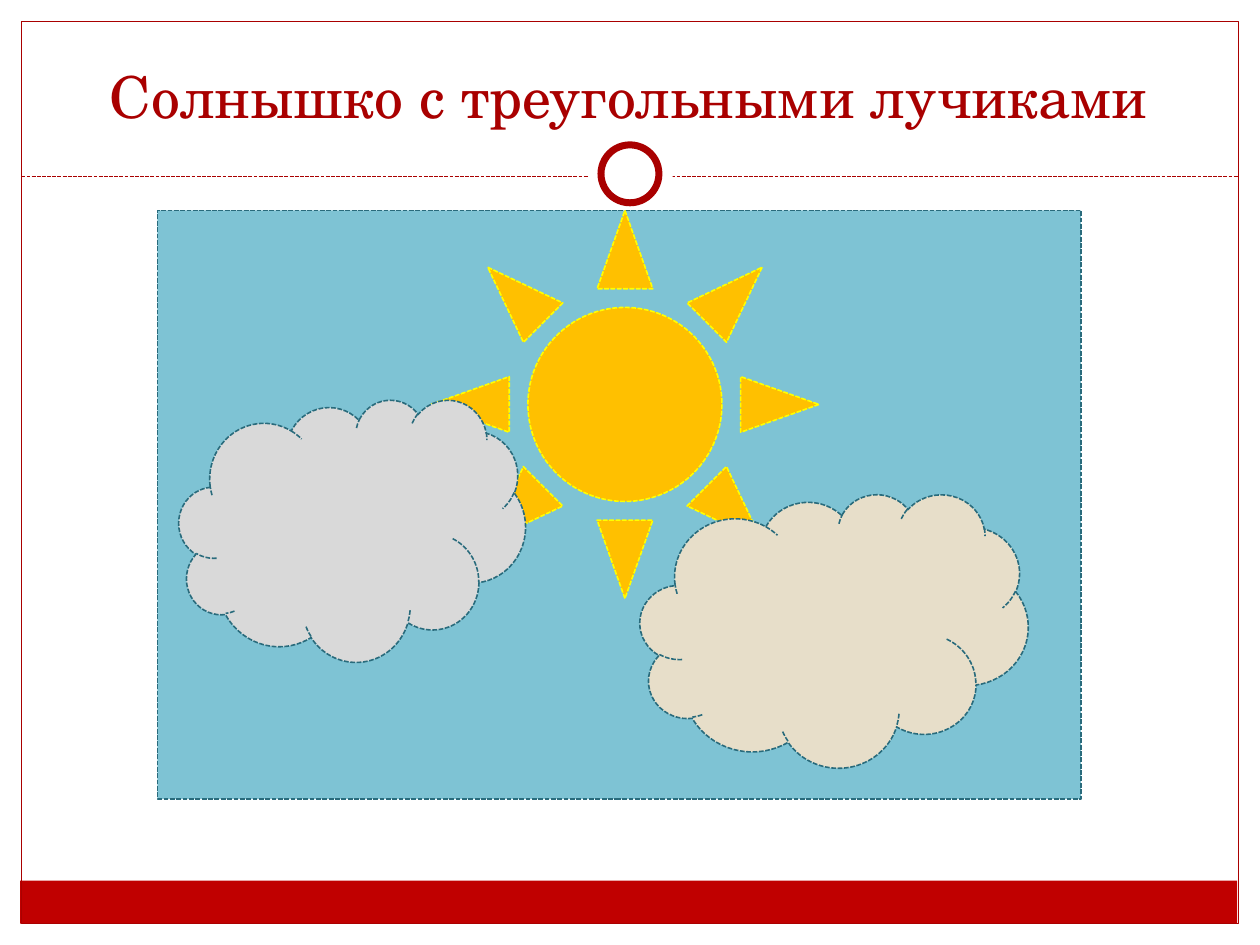
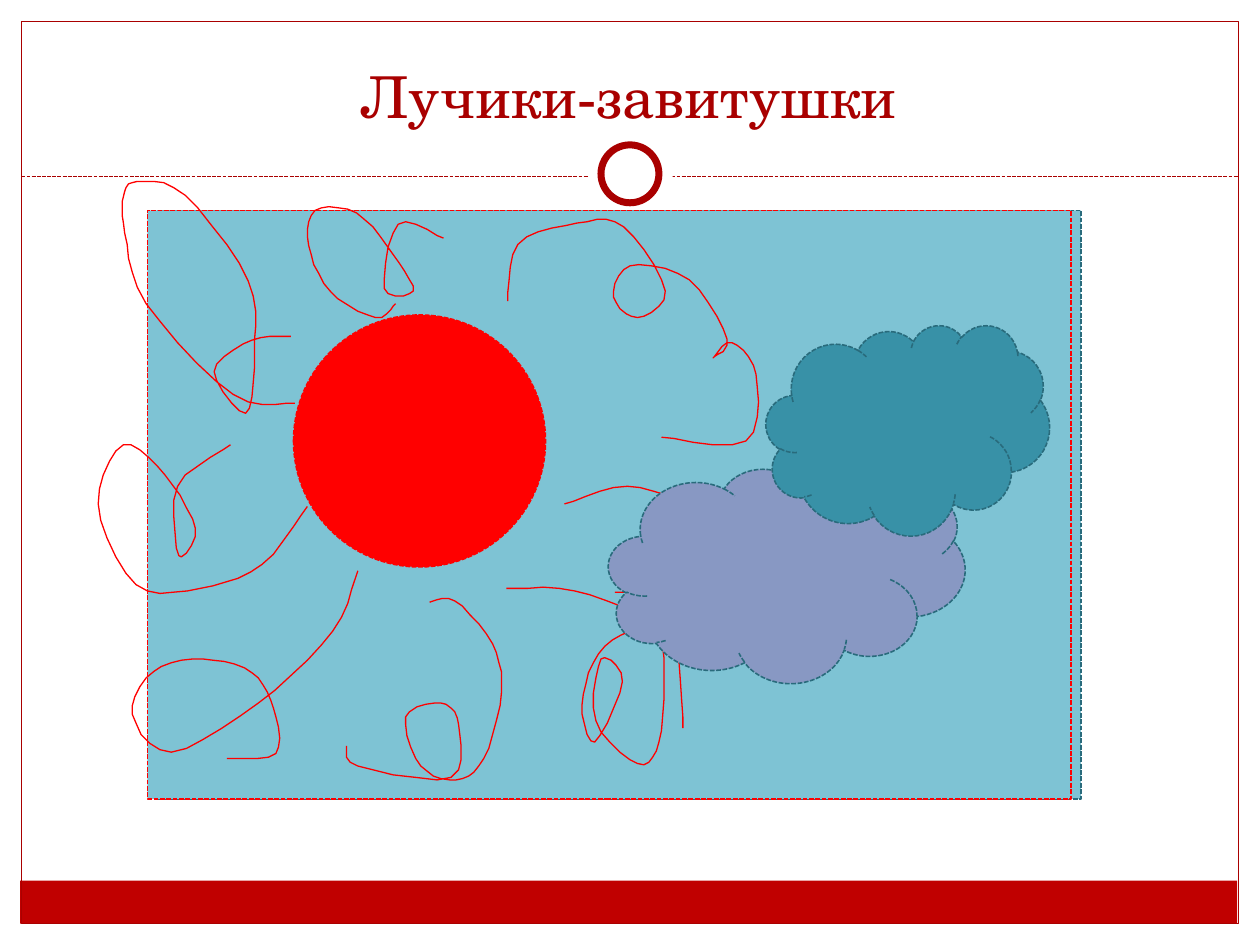
"""Build two slides of sun drawings: triangular rays and curly rays."""
from dataclasses import dataclass

from lxml import etree
from pptx import Presentation
from pptx.dml.color import RGBColor
from pptx.enum.dml import MSO_LINE
from pptx.enum.shapes import MSO_CONNECTOR, MSO_SHAPE
from pptx.enum.text import MSO_ANCHOR, MSO_AUTO_SIZE, PP_ALIGN
from pptx.oxml.ns import qn
from pptx.util import Pt

PX = 9144
TITLE_ONLY = 5
CURVE_STEPS = 5
RECTANGLE = MSO_SHAPE.RECTANGLE
OVAL = MSO_SHAPE.OVAL
SUN = MSO_SHAPE.SUN
CLOUD = MSO_SHAPE.CLOUD
STRAIGHT = MSO_CONNECTOR.STRAIGHT
SHORT_DASH = MSO_LINE.SQUARE_DOT
BOTTOM = MSO_ANCHOR.BOTTOM
NO_AUTOFIT = MSO_AUTO_SIZE.NONE
CENTER = PP_ALIGN.CENTER


@dataclass(frozen=True)
class Theme:
    font: str = "TeX Gyre Schola"
    title_size: float = 33
    thin_width: float = 0.75
    ring_width: float = 4
    drawing_width: float = 0.9
    accent: str = "A90000"
    band: str = "C00000"
    paper: str = "FFFFFF"
    sky: str = "7EC3D4"
    outline: str = "296B7C"
    sun: str = "FFC000"
    sun_outline: str = "FFFF00"
    red: str = "FF0000"
    cream_cloud: str = "E7DEC9"
    grey_cloud: str = "D9D9D9"
    violet_cloud: str = "8898C3"
    teal_cloud: str = "3891A7"


THEME = Theme()

SKY = (RECTANGLE, (125, 167, 733, 467), THEME.sky, THEME.outline)

CURLS = [
    [(403, 239), (411, 194), (458, 177), (495, 180), (528, 231), (506, 252),
     (487, 236), (500, 211), (547, 222), (577, 269), (566, 284), (581, 272),
     (600, 297), (592, 350), (525, 347)],
    [(448, 400), (498, 386), (545, 403), (553, 441), (530, 447), (538, 436),
     (578, 452), (548, 466), (488, 470)],
    [(402, 467), (456, 469), (516, 494), (527, 531), (523, 589), (506, 606),
     (473, 572), (477, 523), (494, 541), (472, 589), (462, 559), (475, 519),
     (506, 500), (536, 516), (542, 578)],
    [(341, 478), (361, 477), (391, 511), (398, 550), (384, 602), (362, 619),
     (334, 608), (322, 569), (350, 558), (364, 575), (358, 617), (284, 608),
     (275, 592)],
    [(284, 453), (264, 501), (205, 558), (136, 597), (105, 567), (122, 533),
     (161, 523), (200, 534), (217, 562), (219, 598), (180, 602)],
    [(244, 402), (208, 448), (159, 467), (108, 464), (78, 400), (98, 353),
     (131, 377), (155, 419), (142, 441), (141, 386), (183, 353)],
    [(234, 320), (185, 313), (116, 241), (99, 185), (98, 156), (109, 144),
     (147, 155), (197, 223), (202, 281), (195, 328), (170, 295), (200, 270),
     (231, 267)],
    [(314, 241), (298, 252), (262, 231), (245, 195), (250, 167), (283, 169),
     (312, 202), (328, 231), (305, 229), (316, 178), (352, 189)],
]

SLIDES = [
    ("Солнышко с треугольными лучиками", [
        SKY,
        (SUN, (342, 167, 308, 308), THEME.sun, THEME.sun_outline),
    ], [], [
        (CLOUD, (508, 392, 308, 217), THEME.cream_cloud, THEME.outline),
        (CLOUD, (142, 317, 275, 208), THEME.grey_cloud, THEME.outline),
    ]),
    ("Лучики-завитушки", [
        SKY,
        (RECTANGLE, (117, 167, 733, 467), THEME.sky, THEME.red),
        (OVAL, (233, 250, 200, 200), THEME.red, THEME.red),
    ], CURLS, [
        (CLOUD, (483, 367, 283, 175), THEME.violet_cloud, THEME.outline),
        (CLOUD, (608, 258, 225, 167), THEME.teal_cloud, THEME.outline),
    ]),
]


def style_shape(shape, fill=None, line=None, width=THEME.drawing_width):
    shape.shadow.inherit = False
    if fill:
        shape.fill.solid()
        shape.fill.fore_color.rgb = RGBColor.from_string(fill)
    else:
        shape.fill.background()
    if line:
        shape.line.color.rgb = RGBColor.from_string(line)
        shape.line.width = Pt(width)
    else:
        shape.line.fill.background()


def add_preset(slide, preset, box, *style):
    shape = slide.shapes.add_shape(preset, *(value * PX for value in box))
    style_shape(shape, *style)
    return shape


presentation = Presentation()
presentation.slide_width = 1000 * PX
presentation.slide_height = 750 * PX

for title_text, scenery, curls, clouds in SLIDES:
    slide = presentation.slides.add_slide(presentation.slide_layouts[TITLE_ONLY])

    add_preset(slide, RECTANGLE, (16, 699, 966, 34), THEME.band)
    add_preset(slide, RECTANGLE, (17, 17, 966, 716), None, THEME.accent, THEME.thin_width)
    divider = slide.shapes.add_connector(STRAIGHT, 17 * PX, 140 * PX, 983 * PX, 140 * PX)
    divider.line.color.rgb = RGBColor.from_string(THEME.accent)
    divider.line.width = Pt(THEME.thin_width)
    divider.line.dash_style = SHORT_DASH
    etree.SubElement(divider.element.spPr, qn("a:effectLst"))
    add_preset(slide, OVAL, (467, 105, 67, 67), THEME.paper)
    add_preset(slide, OVAL, (477, 115, 46, 46), THEME.paper, THEME.accent, THEME.ring_width)

    title = slide.shapes.title
    title.left, title.top, title.width, title.height = (
        value * PX for value in (33, 25, 933, 83))
    text_frame = title.text_frame
    text_frame.text = title_text
    text_frame.vertical_anchor = BOTTOM
    text_frame.auto_size = NO_AUTOFIT
    text_frame.word_wrap = True
    paragraph = text_frame.paragraphs[0]
    paragraph.alignment = CENTER
    font = paragraph.runs[0].font
    font.name = THEME.font
    font.size = Pt(THEME.title_size)
    font.color.rgb = RGBColor.from_string(THEME.accent)

    for drawing in scenery:
        add_preset(slide, *drawing).line.dash_style = SHORT_DASH

    for knots in curls:
        padded = [knots[0], *knots, knots[-1]]
        points = []
        for segment in zip(padded, padded[1:], padded[2:], padded[3:]):
            for step in range(1, CURVE_STEPS + 1):
                t = step / CURVE_STEPS
                points.append(tuple(
                    b + t / 2 * (c - a + t * (2 * a - 5 * b + 4 * c - d
                                              + t * (3 * b - a - 3 * c + d)))
                    for a, b, c, d in zip(*segment)))
        builder = slide.shapes.build_freeform(*knots[0], scale=PX)
        builder.add_line_segments(points, close=False)
        style_shape(builder.convert_to_shape(), None, THEME.red, THEME.thin_width)

    for cloud in clouds:
        add_preset(slide, *cloud).line.dash_style = SHORT_DASH

presentation.save("out.pptx")
